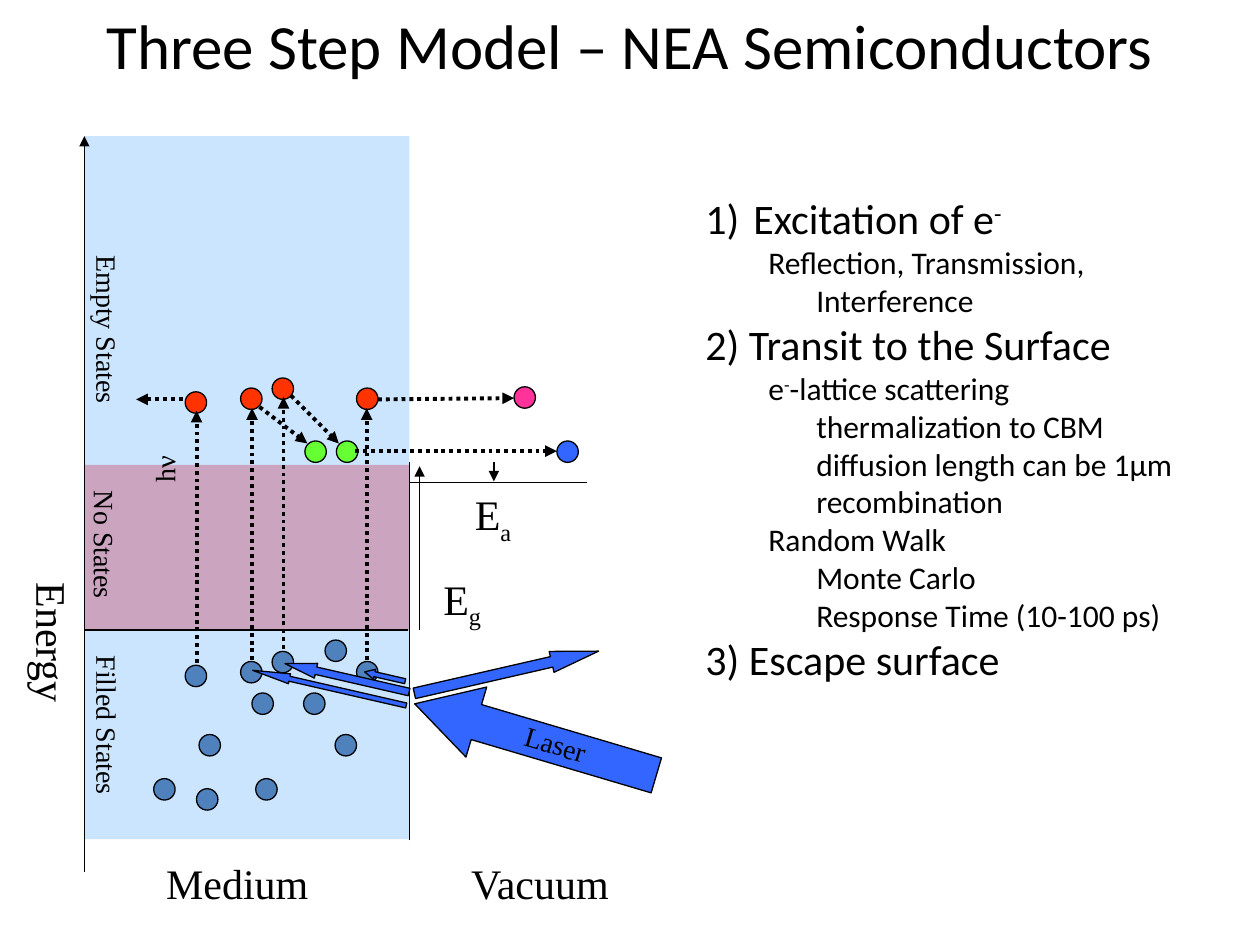
from lxml import etree
from pptx import Presentation
from pptx.dml.color import RGBColor
from pptx.enum.dml import MSO_LINE
from pptx.enum.shapes import MSO_CONNECTOR, MSO_SHAPE
from pptx.enum.text import PP_ALIGN
from pptx.oxml.ns import qn
from pptx.util import Inches, Pt

BLACK = RGBColor(0x00, 0x00, 0x00)
RED = RGBColor(0xFF, 0x00, 0x00)
PALE_BLUE = RGBColor(0x99, 0xCC, 0xFF)
STEEL_BLUE = RGBColor(0x4F, 0x81, 0xBD)
LASER_BLUE = RGBColor(0x33, 0x66, 0xFF)
ORANGE = RGBColor(0xFF, 0x33, 0x00)
GREEN = RGBColor(0x66, 0xFF, 0x33)
PINK = RGBColor(0xFF, 0x33, 0x99)

STRAIGHT = MSO_CONNECTOR.STRAIGHT
DOTTED = MSO_LINE.ROUND_DOT
RECTANGLE = MSO_SHAPE.RECTANGLE
OVAL = MSO_SHAPE.OVAL
LEFT_ARROW = MSO_SHAPE.LEFT_ARROW
RIGHT_ARROW = MSO_SHAPE.RIGHT_ARROW
LEFT = PP_ALIGN.LEFT
CENTER = PP_ALIGN.CENTER

SERIF = "Times New Roman"
SANS = "Calibri"
ELECTRON_SIZE = 0.17

presentation = Presentation()
presentation.slide_width = Inches(10)
presentation.slide_height = Inches(7.5)
slide = presentation.slides.add_slide(presentation.slide_layouts[6])
shapes = slide.shapes


def add_line(start_x, start_y, end_x, end_y, arrow=False, dotted=False):
    line = shapes.add_connector(
        STRAIGHT, Inches(start_x), Inches(start_y), Inches(end_x), Inches(end_y))
    line.line.color.rgb = BLACK
    line.line.width = Pt(2.25 if dotted else 0.75)
    if dotted:
        line.line.dash_style = DOTTED
    properties = line._element.spPr
    if arrow:
        etree.SubElement(properties.find(qn("a:ln")), qn("a:tailEnd"), type="triangle")
    etree.SubElement(properties, qn("a:effectLst"))


def write_runs(paragraph, runs, size, font_name):
    paragraph.font.size = Pt(size)
    paragraph.font.name = font_name
    paragraph.font.color.rgb = BLACK
    for text, baseline in runs:
        run = paragraph.add_run()
        run.text = text
        if baseline:
            run.font._element.set("baseline", str(baseline * 1000))


bands = [(3.69, 1.31, RED), (1.08, 5.58, PALE_BLUE)]
for top, height, color in bands:
    band = shapes.add_shape(RECTANGLE, Inches(0.67), Inches(top), Inches(2.58), Inches(height))
    band.shadow.inherit = False
    band.fill.solid()
    band.fill.fore_color.rgb = color
    band.line.fill.background()
    color_element = band._element.spPr.find(qn("a:solidFill"))[0]
    etree.SubElement(color_element, qn("a:alpha"), val="50000")

add_line(3.25, 6.67, 3.25, 3.67)
add_line(0.67, 6.92, 0.67, 1.08, arrow=True)
add_line(0.67, 5, 3.24, 5)
add_line(3.25, 3.83, 4.66, 3.83)
add_line(3.33, 5, 3.33, 3.7, arrow=True)
add_line(3.92, 3.67, 3.92, 3.82, arrow=True)

electrons = [
    (STEEL_BLUE, [(1.56, 6.26), (1.91, 5.25), (2, 5.5), (2.66, 5.83), (2.41, 5.5),
                  (2.16, 5.17), (2.83, 5.25), (2.03, 6.18), (2.58, 5.08),
                  (1.22, 6.18), (1.58, 5.83), (1.47, 5.28)]),
    (ORANGE, [(2.83, 3.08), (1.91, 3.08), (2.16, 3), (1.47, 3.11)]),
    (GREEN, [(2.42, 3.5), (2.67, 3.5)]),
    (PINK, [(4.08, 3.07)]),
    (LASER_BLUE, [(4.42, 3.5)]),
]
for color, positions in electrons:
    for left, top in positions:
        electron = shapes.add_shape(
            OVAL, Inches(left), Inches(top), Inches(ELECTRON_SIZE), Inches(ELECTRON_SIZE))
        electron.shadow.inherit = False
        electron.fill.solid()
        electron.fill.fore_color.rgb = color
        electron.line.color.rgb = BLACK
        electron.line.width = Pt(0.75)

rays = [
    (LEFT_ARROW, 3.25, 5.58, 2, 0.58, 16.5, 0.88),
    (LEFT_ARROW, 2.89, 5.33, 0.33, 0.08, 12.9, 1),
    (LEFT_ARROW, 1.99, 5.42, 1.25, 0.08, 12.9, 3.75),
    (RIGHT_ARROW, 3.27, 5.25, 1.5, 0.17, -12.9, 2.25),
    (LEFT_ARROW, 2.25, 5.32, 1.01, 0.12, 12.9, 2.1),
]
for kind, left, top, width, height, rotation, head_length in rays:
    ray = shapes.add_shape(kind, Inches(left), Inches(top), Inches(width), Inches(height))
    ray.shadow.inherit = False
    ray.rotation = rotation
    ray.adjustments[0] = 0.5
    ray.adjustments[1] = head_length
    ray.fill.solid()
    ray.fill.fore_color.rgb = LASER_BLUE
    ray.line.color.rgb = BLACK
    ray.line.width = Pt(0.75)

for x, bottom in [(1.56, 5.26), (2, 5.24), (2.25, 5.15), (2.91, 5.24)]:
    add_line(x, bottom, x, bottom - 2, arrow=True, dotted=True)
for move in [(2.06, 3.23, 2.44, 3.52), (2.31, 3.14, 2.69, 3.52), (3, 3.17, 4.08, 3.16),
             (2.82, 3.58, 4.42, 3.58), (1.45, 3.17, 1.08, 3.17)]:
    add_line(*move, arrow=True, dotted=True)

labels = [
    ([("Three Step Model – NEA Semiconductors", 0)], 0, 0, 10, 0.71, 0, 36, SANS, CENTER),
    ([("Energy", 0)], -0.24, 4.85, 1.32, 0.5, 90, 24, SERIF, CENTER),
    ([("Medium", 0)], 1.22, 6.76, 1.5, 0.5, 0, 24, SERIF, LEFT),
    ([("Vacuum", 0)], 3.41, 6.76, 1.75, 0.5, 0, 24, SERIF, CENTER),
    ([("Filled States", 0)], 0.1, 5.57, 1.5, 0.37, 90, 16, SERIF, CENTER),
    ([("Empty States", 0)], 0.1, 2.43, 1.5, 0.37, 90, 16, SERIF, CENTER),
    ([("No States", 0)], 0.08, 4.14, 1.5, 0.37, 90, 16, SERIF, CENTER),
    ([("hν", 0)], 0.91, 3.54, 0.79, 0.37, 270, 16, SERIF, CENTER),
    ([("Laser", 0)], 3.66, 5.72, 1.5, 0.37, 16.5, 16, SERIF, CENTER),
    ([("E", 0), ("g", -25)], 3.42, 4.5, 0.52, 0.5, 0, 24, SERIF, LEFT),
    ([("E", 0), ("a", -25)], 3.67, 3.83, 0.51, 0.5, 0, 24, SERIF, LEFT),
]
for runs, left, top, width, height, rotation, size, font_name, alignment in labels:
    label = shapes.add_textbox(Inches(left), Inches(top), Inches(width), Inches(height))
    label.rotation = rotation
    label.text_frame.word_wrap = True
    paragraph = label.text_frame.paragraphs[0]
    paragraph.alignment = alignment
    write_runs(paragraph, runs, size, font_name)

HEADING = (24, 0.38, -0.38)
DETAIL = (18, 0.88, -0.38)
SUBDETAIL = (18, 0.88, 0)
steps = [
    (HEADING, [("Excitation of e", 0), ("-", 30)]),
    (DETAIL, [("Reflection, Transmission, Interference", 0)]),
    (HEADING, [("2) Transit to the Surface", 0)]),
    (DETAIL, [("e", 0), ("-", 30), ("-lattice scattering", 0)]),
    (SUBDETAIL, [("thermalization to CBM", 0)]),
    (SUBDETAIL, [("diffusion length can be 1µm", 0)]),
    (SUBDETAIL, [("recombination", 0)]),
    (DETAIL, [("Random Walk", 0)]),
    (SUBDETAIL, [("Monte Carlo", 0)]),
    (SUBDETAIL, [("Response Time (10-100 ps)", 0)]),
    (HEADING, [("3) Escape surface", 0)]),
]
steps_frame = shapes.add_textbox(
    Inches(5.5), Inches(1.48), Inches(4.42), Inches(4.64)).text_frame
steps_frame.word_wrap = True
for index, ((size, margin, indent), runs) in enumerate(steps):
    paragraph = steps_frame.paragraphs[0] if index == 0 else steps_frame.add_paragraph()
    write_runs(paragraph, runs, size, SANS)
    properties = paragraph._p.get_or_add_pPr()
    properties.set("marL", str(Inches(margin)))
    properties.set("indent", str(Inches(indent)))
    if index == 0:
        numbering = etree.Element(qn("a:buAutoNum"), type="arabicParenR")
        properties.insert(0, numbering)

presentation.save("out.pptx")
